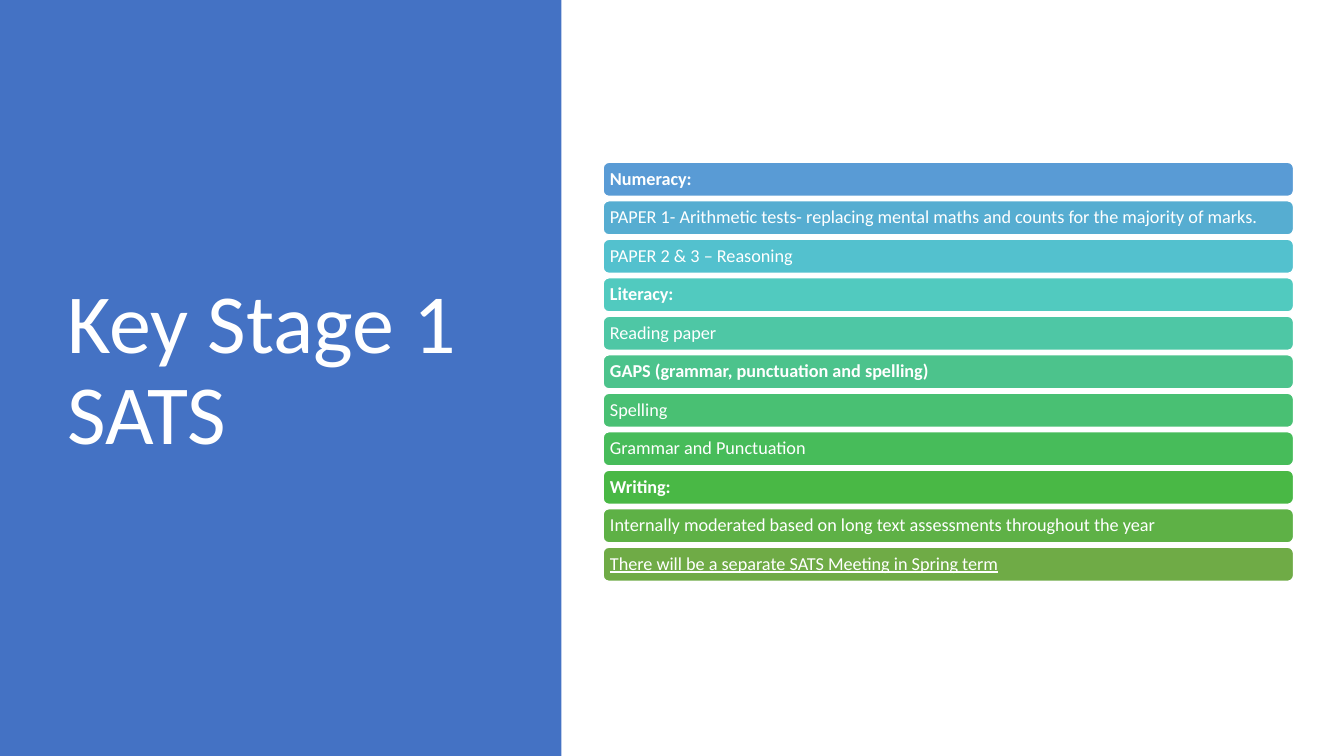
from dataclasses import dataclass

from pptx import Presentation
from pptx.dml.color import RGBColor as RGB
from pptx.enum.shapes import MSO_SHAPE as SHAPE
from pptx.enum.text import MSO_ANCHOR as ANCHOR, PP_ALIGN as ALIGN
from pptx.util import Cm, Pt


@dataclass(frozen=True)
class Theme:
    face: str = "Calibri"
    white: str = "FFFFFF"
    panel: str = "4472C4"
    title: int = 60
    body: int = 13
    edge: int = 1


theme = Theme()

# Text, bar colour, extra font format
bold, plain, under = {"bold": True}, {}, {"underline": True}
rows = [
    ("Numeracy:", "599BD5", bold),
    ("PAPER 1- Arithmetic tests- replacing mental maths and counts "
     "for the majority of marks.", "56ADD1", plain),
    ("PAPER 2 & 3 – Reasoning", "53C1CE", plain),
    ("Literacy:", "51CABF", bold),
    ("Reading paper", "4EC7A5", plain),
    ("GAPS (grammar, punctuation and spelling)", "4CC38C", bold),
    ("Spelling", "49C073", plain),
    ("Grammar and Punctuation", "47BC5A", plain),
    ("Writing:", "49B845", bold),
    ("Internally moderated based on long text assessments "
     "throughout the year", "5EB146", plain),
    ("There will be a separate SATS Meeting in Spring term", "6FAB46", under),
]


def add_block(kind, box, fill):
    block = slide.shapes.add_shape(kind, *map(Cm, box))
    block.shadow.inherit = False
    block.fill.solid()
    block.fill.fore_color.rgb = RGB.from_string(fill)
    block.line.fill.background()
    return block


def write(shape, text, size, side, extra):
    """Set left-aligned white text, centred vertically, with side insets in cm."""
    frame = shape.text_frame
    look = {"word_wrap": True, "vertical_anchor": ANCHOR.MIDDLE,
            "margin_left": Cm(side), "margin_right": Cm(side),
            "margin_top": Cm(0.13), "margin_bottom": Cm(0.13)}
    for name, value in look.items():
        setattr(frame, name, value)
    para = frame.paragraphs[0]
    para.alignment = ALIGN.LEFT
    para.line_spacing = 0.9
    run = para.add_run()
    run.text = text
    run.font.color.rgb = RGB.from_string(theme.white)
    for name, value in {"name": theme.face, "size": Pt(size), **extra}.items():
        setattr(run.font, name, value)


deck = Presentation()
deck.slide_width, deck.slide_height = Cm(33.87), Cm(19.05)
slide = deck.slides.add_slide(deck.slide_layouts[6])

# Title panel
add_block(SHAPE.RECTANGLE, (0, 0, 14.15, 19.05), theme.panel)
title = slide.shapes.add_textbox(Cm(1.45), Cm(1.73), Cm(10.57), Cm(15.29))
write(title, "Key Stage 1 SATS", theme.title, 0.25, plain)

# Stack of bars
top, pitch = 4.09, 0.97
for i, (text, fill, extra) in enumerate(rows):
    bar = add_block(SHAPE.ROUNDED_RECTANGLE,
                    (15.2, top + i * pitch, 17.4, 0.86), fill)
    bar.adjustments[0] = 0.17
    bar.line.color.rgb = RGB.from_string(theme.white)
    bar.line.width = Pt(theme.edge)
    write(bar, text, theme.body, 0.13, extra)

deck.save("out.pptx")
